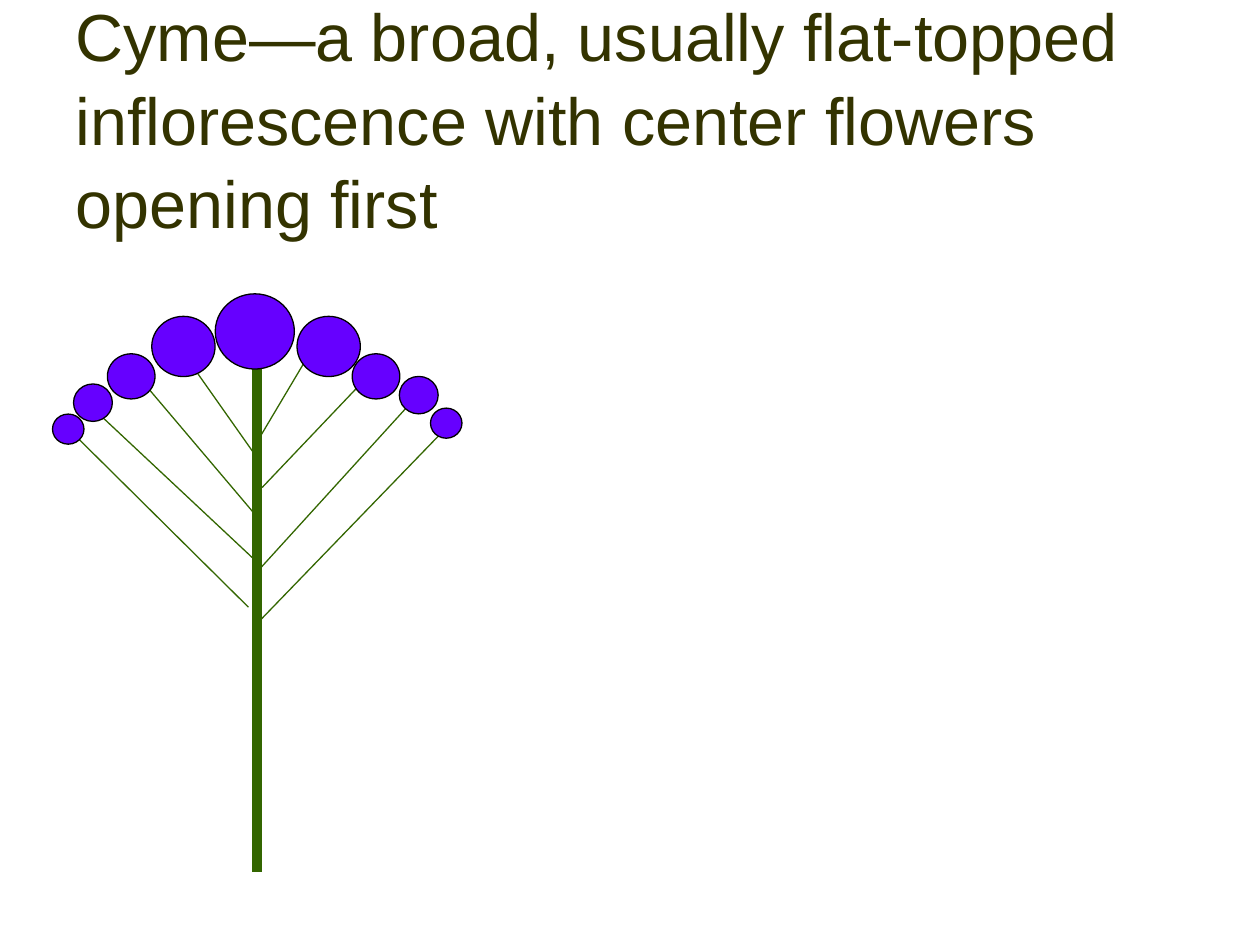
from dataclasses import dataclass

from lxml import etree
from pptx import Presentation
from pptx.dml.color import RGBColor
from pptx.enum.shapes import MSO_CONNECTOR, MSO_SHAPE
from pptx.enum.text import MSO_ANCHOR, PP_ALIGN
from pptx.oxml.ns import qn
from pptx.util import Pt

LINE = MSO_CONNECTOR.STRAIGHT
OVAL = MSO_SHAPE.OVAL
MIDDLE = MSO_ANCHOR.MIDDLE
LEFT = PP_ALIGN.LEFT


@dataclass(frozen=True)
class Theme:
    font: str = "Arial"
    title: float = 38
    ink: str = "333300"
    stem: str = "336600"
    bloom: str = "6600FF"
    edge: str = "000000"
    thick: float = 6
    thin: float = 0.75


def put_text(frame, text, *, font, size, color, align=LEFT, anchor=MIDDLE, space=1.0):
    frame.word_wrap = True
    frame.vertical_anchor = anchor
    para = frame.paragraphs[0]
    para.alignment = align
    para.line_spacing = space
    run = para.add_run()
    run.text = text
    run.font.name = font
    run.font.size = Pt(size)
    run.font.color.rgb = RGBColor.from_string(color)


class Painter:
    def __init__(self, slide, theme):
        self.slide = slide
        self.theme = theme
        self.plant = None

    def title(self, text, left, top, width, height):
        box = self.slide.shapes.add_textbox(Pt(left), Pt(top), Pt(width), Pt(height))
        look = self.theme
        put_text(box.text_frame, text, font=look.font, size=look.title,
                 color=look.ink, space=1.05)

    def group(self):
        self.plant = self.slide.shapes.add_group_shape().shapes

    def stalk(self, start, end, weight):
        line = self.plant.add_connector(LINE, *(Pt(v) for v in start + end))
        line.line.color.rgb = RGBColor.from_string(self.theme.stem)
        line.line.width = Pt(weight)
        etree.SubElement(line._element.spPr, qn("a:effectLst"))

    def flower(self, left, top, width, height):
        oval = self.plant.add_shape(OVAL, Pt(left), Pt(top), Pt(width), Pt(height))
        oval.shadow.inherit = False
        oval.fill.solid()
        oval.fill.fore_color.rgb = RGBColor.from_string(self.theme.bloom)
        oval.line.color.rgb = RGBColor.from_string(self.theme.edge)
        oval.line.width = Pt(self.theme.thin)


AXIS = 146.8
TWIGS = [
    (AXIS, 252.7, 174.2, 206.6),
    (AXIS, 261.4, 110.2, 209.5),
    (149.8, 278.6, 205.9, 219.6),
    (AXIS, 295.2, 74.2, 209.5),
    (AXIS, 326.9, 232.6, 232.6),
    (AXIS, 321.1, 56.9, 236.9),
    (142, 347, 43.2, 249.1),
    (AXIS, 356.4, 250.6, 249.1),
]
SIZES = {
    "huge": (45.2, 43),
    "large": (36.2, 34.4),
    "medium": (27.2, 25.8),
    "small": (22.2, 21.4),
    "tiny": (18, 17.2),
}
FLOWERS = [
    (201.3, 202.2, "medium"),
    (123, 167.9, "huge"),
    (86.7, 180.8, "large"),
    (169.7, 180.8, "large"),
    (61.4, 202.2, "medium"),
    (228.2, 215.1, "small"),
    (42, 219.4, "small"),
    (30, 236.6, "tiny"),
    (246, 233.2, "tiny"),
]


def main():
    deck = Presentation()
    deck.slide_width, deck.slide_height = Pt(720), Pt(540)
    theme = Theme()
    art = Painter(deck.slides.add_slide(deck.slide_layouts[6]), theme)
    art.title("Cyme—a broad, usually flat-topped inflorescence "
              "with center flowers opening first", 36, 21.6, 648, 90)
    art.group()
    art.stalk((AXIS, 209.5), (AXIS, 498.2), theme.thick)
    for x, y, tip, top in TWIGS:
        art.stalk((x, y), (tip, top), theme.thin)
    for left, top, size in FLOWERS:
        art.flower(left, top, *SIZES[size])
    deck.save("out.pptx")


if __name__ == "__main__":
    main()
